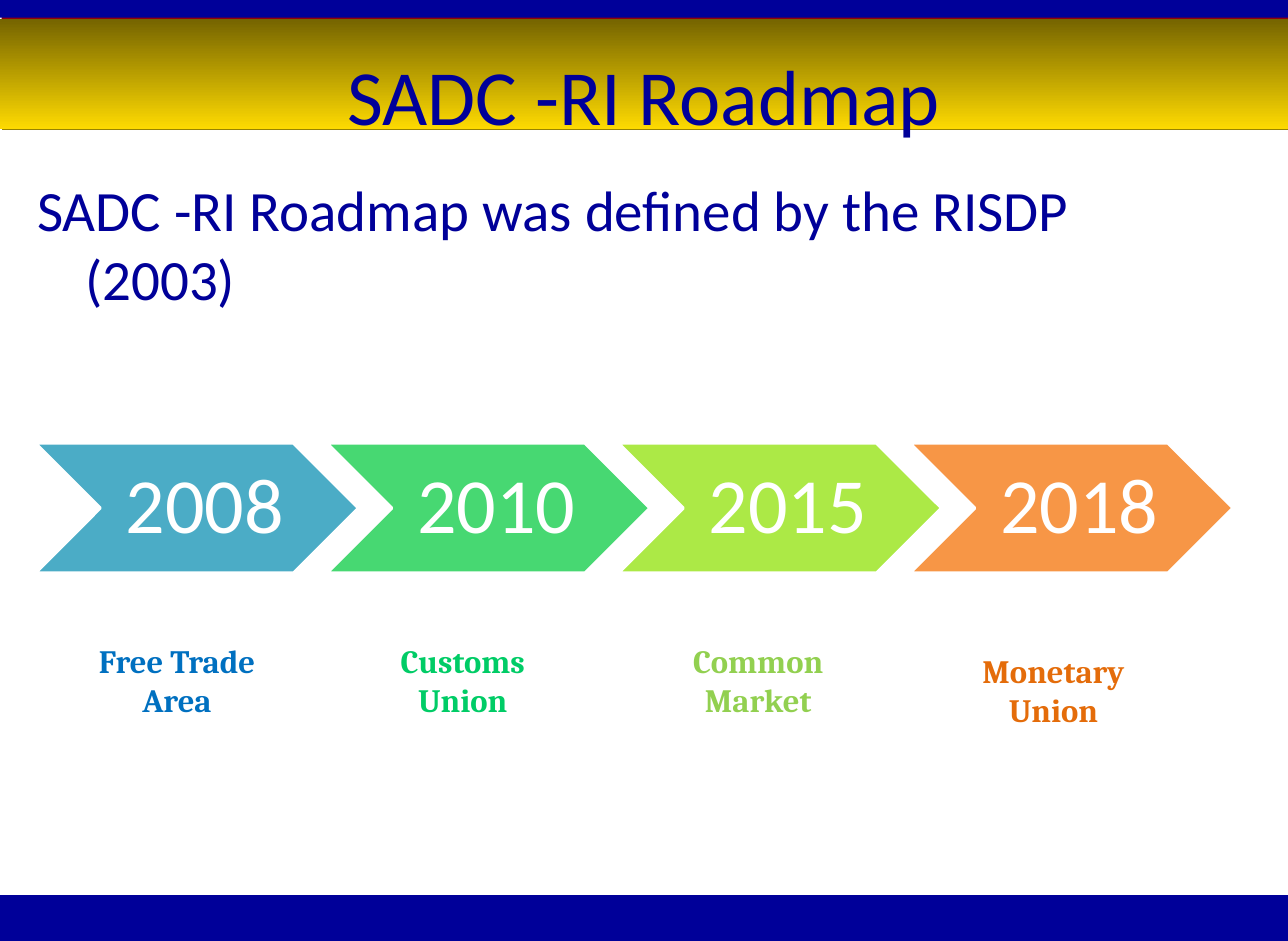
from lxml import etree
from pptx import Presentation
from pptx.dml.color import RGBColor
from pptx.enum.shapes import MSO_SHAPE as Shape
from pptx.enum.text import MSO_ANCHOR as Anchor, PP_ALIGN as Align
from pptx.oxml.ns import qn
from pptx.util import Pt

NAVY, WHITE = "000099", "FFFFFF"
SLIDE_WIDTH, SLIDE_HEIGHT = 791.28, 578.16
CHEVRON_LEFT, CHEVRON_PITCH = 21.6, 179.1

# year, chevron colour, stage, stage colour, stage left, stage top
STAGES = [
    ("2008", "4BACC6", "Free Trade Area", "0070C0", 38.2, 373.7),
    ("2010", "47D872", "Customs Union", "00CC66", 213.8, 373.7),
    ("2015", "ACE946", "Common Market", "92D050", 395.3, 373.7),
    ("2018", "F79646", "Monetary Union", "E46C0A", 576.7, 379.4),
]


def color(value):
    return RGBColor.from_string(value)


def place(left, top, width, height):
    return Pt(left), Pt(top), Pt(width), Pt(height)


def set_margins(frame, left, top, right, bottom):
    frame.margin_left, frame.margin_top = Pt(left), Pt(top)
    frame.margin_right, frame.margin_bottom = Pt(right), Pt(bottom)


def write(frame, text, size, font, shade, align=Align.CENTER, bold=False):
    para = frame.paragraphs[0]
    para.alignment = align
    span = para.add_run()
    span.text = text
    span.font.size, span.font.name = Pt(size), font
    span.font.bold, span.font.color.rgb = bold, color(shade)
    return para


def add_band(page, top, height, shadow_color):
    band = page.shapes.add_shape(Shape.RECTANGLE, *place(0, top, SLIDE_WIDTH, height))
    band.line.fill.background()
    band.fill.solid()
    band.fill.fore_color.rgb = color(NAVY)
    # Hard shadow towards the lower right
    band.shadow.inherit = False
    effects = band._element.spPr.find(qn("a:effectLst"))
    shadow = etree.SubElement(effects, qn("a:outerShdw"), dist=str(Pt(1.4)),
                              dir="2700000", algn="ctr", rotWithShape="0")
    etree.SubElement(shadow, qn("a:srgbClr"), val=shadow_color)
    return band


def add_text(page, area, text, size, font, shade, **style):
    box = page.shapes.add_textbox(*place(*area))
    box.text_frame.word_wrap = True
    return box.text_frame, write(box.text_frame, text, size, font, shade, **style)


def add_chevron(page, left, year, shade):
    chevron = page.shapes.add_shape(Shape.CHEVRON, *place(left, 272.2, 198.7, 79.9))
    chevron.shadow.inherit = False
    chevron.fill.solid()
    chevron.fill.fore_color.rgb = color(shade)
    chevron.line.color.rgb = color(WHITE)
    chevron.line.width = Pt(2)
    frame = chevron.text_frame
    frame.word_wrap = False
    frame.vertical_anchor = Anchor.MIDDLE
    set_margins(frame, 15, 5, 5, 5)
    write(frame, year, 48, "Calibri", WHITE).line_spacing = 0.9


def main():
    deck = Presentation()
    deck.slide_width, deck.slide_height = Pt(SLIDE_WIDTH), Pt(SLIDE_HEIGHT)
    page = deck.slides.add_slide(deck.slide_layouts[6])

    # Top, bottom and title bands
    add_band(page, 0, 10.8, "8F020F")
    add_band(page, 550, 28.16, "8F020F")
    title_band = add_band(page, 11.5, 67.7, "988201")
    title_band.fill.gradient()
    title_band.fill.gradient_angle = 90
    for stop, shade in zip(title_band.fill.gradient_stops, ("FDD901", "756400")):
        stop.color.rgb = color(shade)
    title_band.fill.gradient_stops[0].position = 0
    title_band.fill.gradient_stops[1].position = 1

    # Title and statement
    frame, _ = add_text(page, (39.6, 23, 712, 84.2), "SADC -RI Roadmap",
                        48, "Calibri", NAVY)
    set_margins(frame, 7.2, 6, 7.2, 3.6)
    frame, para = add_text(page, (15.8, 101.5, 748, 392.4),
                           "SADC -RI Roadmap was defined by the RISDP (2003)",
                           35, "Calibri", NAVY, align=Align.LEFT)
    set_margins(frame, 7.2, 6, 18, 3.6)
    hanging = para._p.get_or_add_pPr()
    hanging.set("marL", str(Pt(29.5)))
    hanging.set("indent", str(Pt(-29.5)))

    # Roadmap chevrons with their stages
    for index, (year, shade, stage, stage_color, left, top) in enumerate(STAGES):
        add_chevron(page, CHEVRON_LEFT + index * CHEVRON_PITCH, year, shade)
        frame, _ = add_text(page, (left, top, 141.1, 88.6), stage,
                            20, "Cambria", stage_color, bold=True)
        frame.vertical_anchor = Anchor.MIDDLE

    deck.save("out.pptx")


if __name__ == "__main__":
    main()
